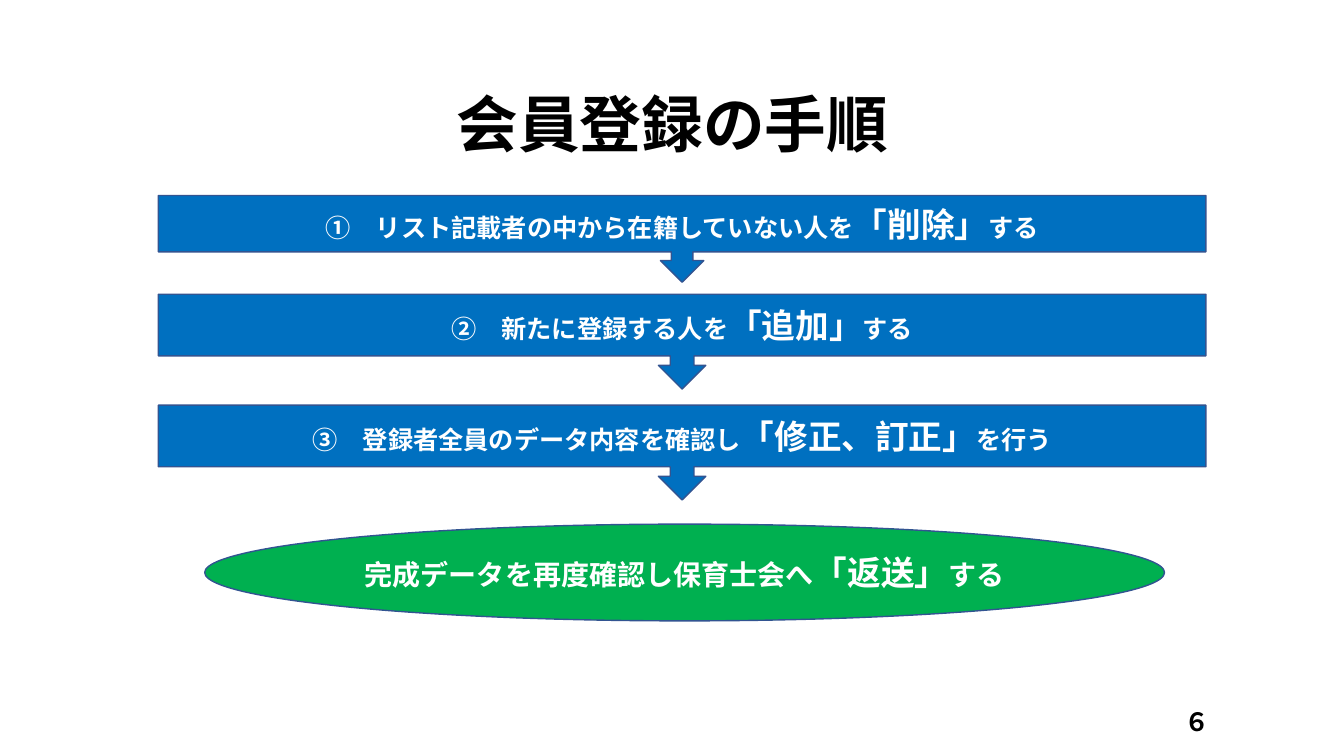
import pptx
import pptx.util
import pptx.dml.color
import pptx.enum.shapes
import pptx.enum.text
import pptx.oxml.ns
import lxml.etree

Inches = pptx.util.Inches
Pt = pptx.util.Pt
RGB = pptx.dml.color.RGBColor
KIND = pptx.enum.shapes.MSO_SHAPE
MIDDLE = pptx.enum.text.MSO_ANCHOR.MIDDLE
CENTER = pptx.enum.text.PP_ALIGN.CENTER
BLUE = RGB(0x00, 0x70, 0xC0)
GREEN = RGB(0x00, 0xB0, 0x50)
EDGE = RGB(0x32, 0x54, 0x91)
WHITE = RGB(0xFF, 0xFF, 0xFF)
BLACK = RGB(0x00, 0x00, 0x00)
FACE = "Noto Sans CJK JP"


def write(para, parts, color, face=FACE):
    for text, size in parts:
        run = para.add_run()
        run.text = text
        run.font.size = Pt(size)
    para.font.bold = True
    para.font.color.rgb = color
    para.font.name = face
    props = para._p.pPr.find(pptx.oxml.ns.qn("a:defRPr"))
    asian = lxml.etree.SubElement(props, pptx.oxml.ns.qn("a:ea"))
    asian.set("typeface", FACE)


deck = pptx.Presentation()
deck.slide_width = Inches(13.33)
deck.slide_height = Inches(7.5)
slide = deck.slides.add_slide(deck.slide_layouts[5])

title = slide.shapes.title
title.left, title.top = Inches(0.92), Inches(0.54)
title.width, title.height = Inches(11.5), Inches(1.45)
title.text_frame.vertical_anchor = MIDDLE
head = title.text_frame.paragraphs[0]
head.alignment = CENTER
head.line_spacing = 0.9
write(head, [("会員登録の手順", 44)], BLACK, "Arial")

CALL = KIND.DOWN_ARROW_CALLOUT
steps = [
    (CALL, 1.57, 1.94, 10.39, 0.86, BLUE, 18,
     "①　リスト記載者の中から在籍していない人を", "「削除」", "する"),
    (CALL, 1.57, 2.92, 10.39, 0.94, BLUE, 18,
     "②　新たに登録する人を", "「追加」", "する"),
    (CALL, 1.57, 4.02, 10.39, 0.94, BLUE, 18,
     "③　登録者全員のデータ内容を確認し", "「修正、訂正」", "を行う"),
    (KIND.OVAL, 2.03, 5.2, 9.52, 0.96, GREEN, 20,
     "完成データを再度確認し保育士会へ", "「返送」", "する"),
]
for kind, left, top, width, height, fill, size, lead, key, tail in steps:
    step = slide.shapes.add_shape(
        kind, Inches(left), Inches(top), Inches(width), Inches(height))
    step.shadow.inherit = False
    step.fill.solid()
    step.fill.fore_color.rgb = fill
    step.line.color.rgb = EDGE
    step.line.width = Pt(1)
    step.text_frame.vertical_anchor = MIDDLE
    para = step.text_frame.paragraphs[0]
    para.alignment = CENTER
    write(para, [(lead, size), (key, 24), (tail, size)], WHITE)

page = slide.shapes.add_textbox(
    Inches(11.65), Inches(6.96), Inches(0.46), Inches(0.4))
page.text_frame.word_wrap = True
write(page.text_frame.paragraphs[0], [("６", 18)], BLACK)

deck.save("out.pptx")
